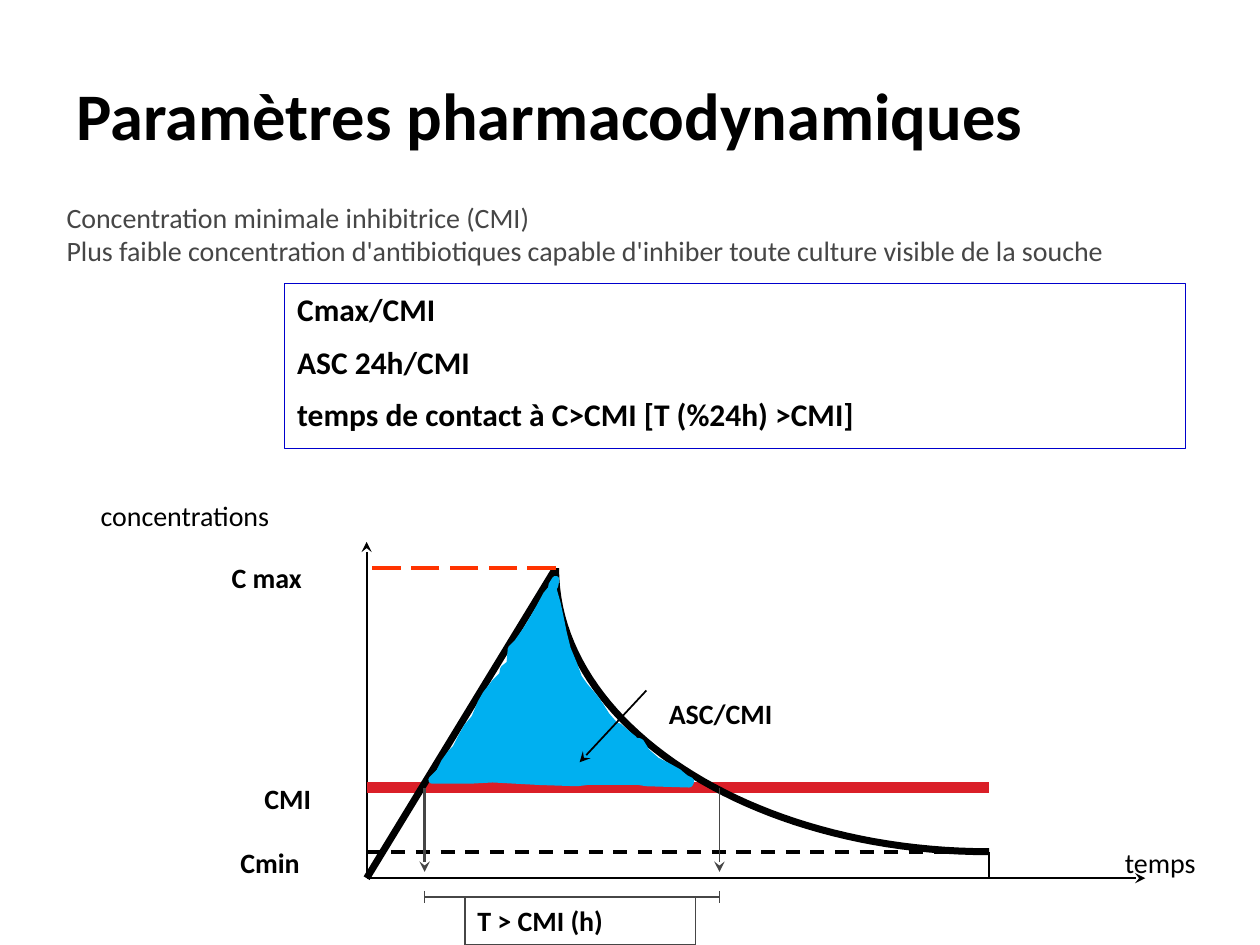
import pptx
import pptx.util
import pptx.dml.color
import pptx.enum.dml
import pptx.enum.shapes
import pptx.enum.text
import pptx.oxml
import pptx.oxml.ns

COLS, ROWS = 100, 75
BLACK, GREY, RED, BLUE = "000000", "464646", "DA1F28", "00B0F0"
X_ORIGIN, X_RISE, X_PEAK, X_FALL, X_END = 29.1, 33.7, 44.1, 57.1, 78.5
Y_PEAK, Y_CMI, Y_CMIN, Y_AXIS, Y_SPAN = 45.1, 62.5, 67.6, 69.7, 71.2
DASH = pptx.enum.dml.MSO_LINE.DASH
LONG_DASH = pptx.enum.dml.MSO_LINE.LONG_DASH

AREA = [
    (34.3, 61.9), (34.9, 61.3), (35.3, 60.5), (35.8, 59.8), (36.2, 59.4),
    (36.6, 58.6), (37.1, 57.7), (37.7, 57), (38.2, 55.8), (38.6, 55.1),
    (39.3, 54.2), (39.9, 53.6), (40, 53.1), (40.5, 52.7), (40.6, 51.5),
    (41.1, 51), (41.8, 50), (42.4, 49), (42.8, 48.3), (43.4, 47.2),
    (44, 46.5), (44.1, 46), (43.8, 46.5), (44.2, 47.9), (44.5, 49.3),
    (44.7, 50.3), (45, 51.5), (45.5, 52.7), (45.9, 53.8), (46.4, 54.5),
    (47.1, 55.3), (47.6, 56), (48.1, 56.8), (48.8, 57.6), (49.1, 57.7),
    (49.8, 58.3), (50.3, 58.7), (50.2, 58.8), (50.8, 58.9), (51.3, 59.7),
    (52.1, 60.4), (52.9, 60.8), (53.8, 61.3), (54.4, 61.8), (54.8, 62),
    (54.7, 62.2), (51.3, 62.1), (50.7, 62), (46.6, 62), (45.8, 62.1),
    (42.8, 62), (39.1, 61.8), (37.3, 61.9),
]


def grid(n):
    """Convert a number of grid cells to a length."""
    return pptx.util.Inches(n * 10 / COLS)


def rgb(code):
    """Turn a hex string into a colour."""
    return pptx.dml.color.RGBColor.from_string(code)


def style_line(line, color, width, dash=None):
    """Set the colour, width and dash of an outline."""
    line.color.rgb = rgb(color)
    line.width = pptx.util.Pt(width)
    if dash:
        line.dash_style = dash


def add_text(slide, box, lines, size=16, color=BLACK, bold=False, wrap=True,
             gap=0, border=None, anchor=pptx.enum.text.MSO_ANCHOR.TOP):
    """Add left-aligned lines of text, with an optional border."""
    sp = slide.shapes.add_textbox(*map(grid, box))
    tf = sp.text_frame
    tf.word_wrap = wrap
    tf.vertical_anchor = anchor
    for i, text in enumerate(lines):
        p = tf.add_paragraph() if i else tf.paragraphs[0]
        p.text = text
        p.space_before = pptx.util.Pt(gap if i else 0)
        font = p.runs[0].font
        font.name, font.size, font.bold = "Calibri", pptx.util.Pt(size), bold
        font.color.rgb = rgb(color)
    if border:
        style_line(sp.line, *border)


def add_line(slide, start, end, color=BLACK, width=1, dash=None, arrow=False):
    """Add a straight line, with an optional arrowhead at its end."""
    sp = slide.shapes.add_connector(pptx.enum.shapes.MSO_CONNECTOR.STRAIGHT,
                                    *map(grid, start + end))
    style_line(sp.line, color, width, dash)
    if arrow:
        tail = pptx.oxml.ns.qn("a:tailEnd")
        sp.line._get_or_add_ln().makeelement(tail)
        head = pptx.oxml.parse_xml(
            '<a:tailEnd xmlns:a="http://schemas.openxmlformats.org/'
            'drawingml/2006/main" type="stealth"/>')
        sp.line._get_or_add_ln().append(head)
    props = sp._element.spPr
    props.append(props.makeelement(pptx.oxml.ns.qn("a:effectLst")))


def add_outline(slide, points, color, width, closed):
    """Add a filled closed outline or an unfilled open one."""
    points = [(grid(x), grid(y)) for x, y in points]
    builder = slide.shapes.build_freeform(*points[0])
    builder.add_line_segments(points[1:], close=closed)
    sp = builder.convert_to_shape()
    sp.shadow.inherit = False
    style_line(sp.line, color, width)
    if closed:
        sp.fill.solid()
        sp.fill.fore_color.rgb = rgb(color)
    else:
        sp.fill.background()


def bezier(a, b, c, d, steps=48):
    """Return points along a cubic curve."""
    ts = [i / steps for i in range(steps + 1)]
    return [tuple((1 - t) ** 3 * p + 3 * t * (1 - t) ** 2 * q
                  + 3 * t * t * (1 - t) * r + t ** 3 * s
                  for p, q, r, s in zip(a, b, c, d)) for t in ts]


def add_graph(slide):
    """Draw the concentration curve, its levels and the time span."""
    add_line(slide, (X_ORIGIN, Y_AXIS), (X_ORIGIN, 43), arrow=True)
    add_line(slide, (X_ORIGIN, Y_AXIS), (90.9, Y_AXIS), arrow=True)
    add_line(slide, (X_ORIGIN, Y_CMIN), (75.9, Y_CMIN), width=2, dash=DASH)
    add_line(slide, (X_ORIGIN, Y_CMI), (X_END, Y_CMI), RED, 6)
    add_line(slide, (X_ORIGIN, Y_AXIS), (X_PEAK, Y_PEAK), width=4)
    decay = bezier((X_END, Y_CMIN), (59.5, Y_CMIN), (X_PEAK, 57.5),
                   (X_PEAK, Y_PEAK))
    add_outline(slide, decay, BLACK, 4, closed=False)
    add_line(slide, (X_PEAK, Y_PEAK), (X_ORIGIN, Y_PEAK), "FF3300", 2, LONG_DASH)
    for x, width in ((X_RISE, 2), (X_FALL, 1)):
        add_line(slide, (x, Y_CMI), (x, 69.2), GREY, width, arrow=True)
        add_line(slide, (x, Y_SPAN - 0.5), (x, Y_SPAN + 0.5), GREY)
    add_line(slide, (X_RISE, Y_SPAN), (X_FALL, Y_SPAN), GREY)
    add_line(slide, (X_END, Y_CMIN), (X_END, Y_AXIS))
    add_outline(slide, AREA, BLUE, 4.33, closed=True)
    add_line(slide, (51.3, 54.8), (46, 60.5), arrow=True)


def main():
    """Build the slide and save it."""
    prs = pptx.Presentation()
    prs.slide_width, prs.slide_height = grid(COLS), grid(ROWS)
    slide = prs.slides.add_slide(prs.slide_layouts[6])
    add_text(slide, (5.1, 2.8, 90, 12.5), ["Paramètres pharmacodynamiques"],
             38, bold=True, anchor=pptx.enum.text.MSO_ANCHOR.MIDDLE)
    add_text(slide, (22.6, 22.5, 71.5, 13.1),
             ["Cmax/CMI", "ASC 24h/CMI",
              "temps de contact à C>CMI [T (%24h) >CMI]"],
             18, bold=True, gap=8.6, border=("0000CC", 0.75))
    add_text(slide, (4.3, 15.4, 85.3, 6.4),
             ["Concentration minimale inhibitrice (CMI)",
              "Plus faible concentration d'antibiotiques capable d'inhiber "
              "toute culture visible de la souche"], color=GREY, wrap=False)
    add_graph(slide)
    for left, top, width, text, bold in (
            (52.1, 54.8, 14.5, "ASC/CMI", True),
            (17.4, 44, 9.8, "C max", True),
            (18.1, 66.6, 9.1, "Cmin", True),
            (20, 61.5, 7.2, "CMI", True),
            (88.3, 66.6, 9.8, "temps", False),
            (7, 39.1, 20.2, "concentrations", False)):
        add_text(slide, (left, top, width, 3.7), [text], bold=bold)
    add_text(slide, (36.9, Y_SPAN, 18.3, 3.8), ["T > CMI (h)"], bold=True,
             border=(GREY, 1))
    prs.save("out.pptx")


if __name__ == "__main__":
    main()
